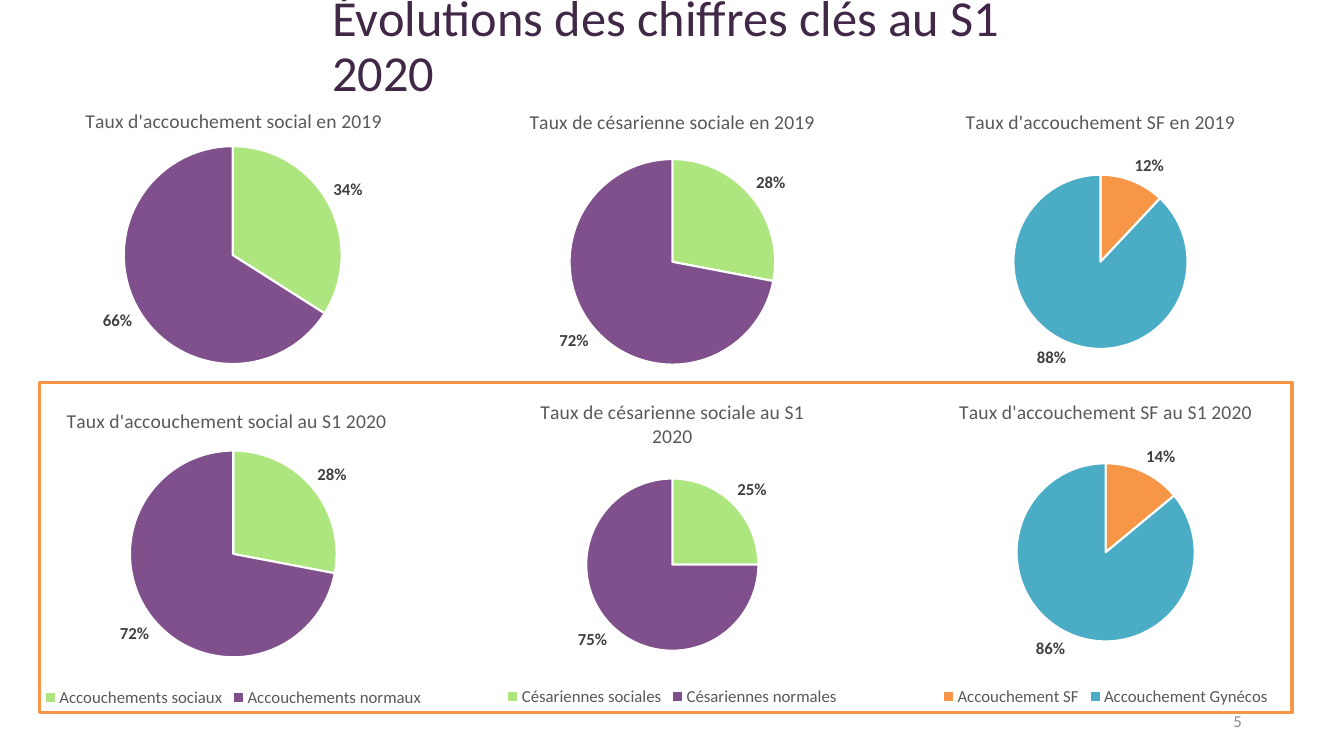
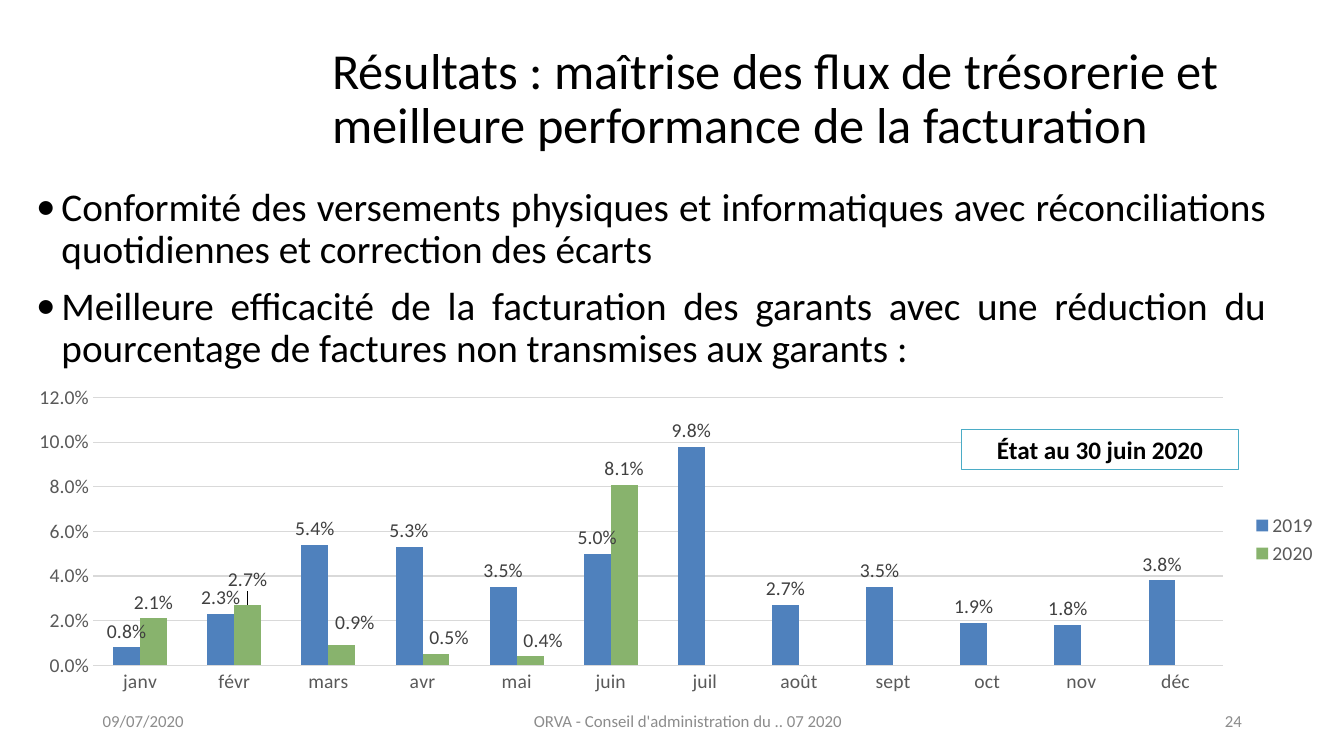
"""Build two slides of key figures and billing results."""
from dataclasses import dataclass
from typing import Any, Optional

import lxml.etree
import pptx
import pptx.chart.data
import pptx.dml.color
import pptx.enum.chart
import pptx.enum.shapes
import pptx.enum.text
import pptx.oxml
import pptx.oxml.ns
import pptx.util

Cm = pptx.util.Cm
Pt = pptx.util.Pt
Align = pptx.enum.text.PP_ALIGN
Spot = pptx.enum.chart.XL_LABEL_POSITION
Kind = pptx.enum.chart.XL_CHART_TYPE
Side = pptx.enum.chart.XL_LEGEND_POSITION
Box = tuple[float, float, float, float]

FACE = "Calibri"
BLACK, WHITE = "000000", "FFFFFF"
GREY, DARK, PALE, FOOT = "595959", "404040", "D9D9D9", "8C8C8C"
PLUM, ORANGE, TEAL = "402846", "F79646", "4BACC6"
SOCIAL = ("ADE67F", "7F508B")
MIDWIFE = (ORANGE, TEAL)
BARS = ("4F81BD", "88B36D")
MONTHS = ("janv", "févr", "mars", "avr", "mai", "juin",
          "juil", "août", "sept", "oct", "nov", "déc")
RATES = {
    "2019": (0.008, 0.023, 0.054, 0.053, 0.035, 0.05,
             0.098, 0.027, 0.035, 0.019, 0.018, 0.038),
    "2020": (0.021, 0.027, 0.009, 0.005, 0.004, 0.081),
}
SHIFTS = {1: (0, -0.03), 2: (0.01, -0.02), 3: (0.01, 0), 4: (0.01, 0)}
POINTS = (
    "Conformité des versements physiques et informatiques avec "
    "réconciliations quotidiennes et correction des écarts",
    "Meilleure efficacité de la facturation des garants avec une réduction "
    "du pourcentage de factures non transmises aux garants :",
)


@dataclass
class Style:
    """Hold the look of a text block."""
    size: float
    tint: str
    align: Any = Align.LEFT
    lead: Optional[float] = None
    bold: bool = False
    middle: bool = True
    bullet: bool = False


@dataclass
class Pie:
    """Hold one pie chart, with its plot width and centre height."""
    title: str
    box: Box
    share: int
    tints: tuple[str, str]
    width: float
    centre: float
    names: Optional[tuple[str, str]] = None
    head: Optional[tuple[float, float]] = None


PIES = (
    Pie("Taux d'accouchement social en 2019", (0.99, 2.18, 9.75, 7.34),
        34, SOCIAL, 5.49, 6.43, head=(0.11, 0.06)),
    Pie("Taux de césarienne sociale en 2019", (12.12, 2.36, 9.65, 7.34),
        28, SOCIAL, 5.18, 6.6),
    Pie("Taux d'accouchement SF en 2019", (22.02, 2.36, 11.43, 7.34),
        12, MIDWIFE, 4.39, 6.6),
    Pie("Taux d'accouchement social au S1 2020", (0.38, 9.68, 11, 8.26),
        28, SOCIAL, 5.21, 13.96,
        ("Accouchements sociaux", "Accouchements normaux"), (0.11, 0.06)),
    Pie("Taux de césarienne sociale au S1 2020", (11.99, 9.65, 9.91, 8.26),
        25, SOCIAL, 4.34, 14.23,
        ("Césariennes sociales", "Césariennes normales")),
    Pie("Taux d'accouchement SF au S1 2020", (22.15, 9.65, 11.43, 8.26),
        14, MIDWIFE, 4.49, 13.92,
        ("Accouchement SF", "Accouchement Gynécos")),
)


def tint(code: str) -> pptx.dml.color.RGBColor:
    """Turn a hex string into a colour."""
    return pptx.dml.color.RGBColor.from_string(code)


def paint(part: Any, code: str) -> None:
    """Fill a shape or chart format with a solid colour."""
    part.fill.solid()
    part.fill.fore_color.rgb = tint(code)


def edge(line: Any, code: str, width: float) -> None:
    """Set the colour and width of a line."""
    line.color.rgb = tint(code)
    line.width = Pt(width)


def set_font(font: Any, size: float, code: str, bold: bool = False) -> None:
    """Set face, size, colour and weight of a font."""
    font.name, font.size, font.bold = FACE, Pt(size), bold
    font.color.rgb = tint(code)


def add_mark(para: Any) -> None:
    """Give a paragraph a hanging bullet."""
    props = para._p.get_or_add_pPr()
    props.set("marL", str(Cm(0.64)))
    props.set("indent", str(-Cm(0.64)))
    for tag, key, value in (("a:buFont", "typeface", FACE),
                            ("a:buChar", "char", "•")):
        mark = lxml.etree.SubElement(props, pptx.oxml.ns.qn(tag))
        mark.set(key, value)


def write(slide: Any, box: Box, lines: tuple[str, ...], style: Style) -> Any:
    """Add a wrapped text box with one paragraph per line."""
    shape = slide.shapes.add_textbox(*map(Cm, box))
    frame = shape.text_frame
    frame.word_wrap = True
    anchor = pptx.enum.text.MSO_ANCHOR
    frame.vertical_anchor = anchor.MIDDLE if style.middle else anchor.TOP
    for rank, line in enumerate(lines):
        para = frame.add_paragraph() if rank else frame.paragraphs[0]
        para.text = line
        para.alignment = style.align
        if style.lead:
            para.line_spacing = style.lead
        if rank:
            para.space_before = Pt(10)
        if style.bullet:
            add_mark(para)
        set_font(para.font, style.size, style.tint, style.bold)
    return shape


def add_title(slide: Any, box: Box, text: str, code: str) -> None:
    """Add the slide title."""
    write(slide, box, (text,), Style(36, code, lead=0.9))


def add_foot(slide: Any, left: float, width: float, text: str,
             align: Any) -> None:
    """Add one footer item."""
    write(slide, (left, 17.65, width, 1.02), (text,), Style(12, FOOT, align))


def add_page(slide: Any, number: int) -> None:
    """Add the page number."""
    add_foot(slide, 23.93, 7.62, str(number), Align.RIGHT)


def xml(body: str) -> Any:
    """Parse a chart fragment."""
    first, rest = body.split(">", 1)
    spaces = pptx.oxml.ns.nsdecls("c", "a")
    return pptx.oxml.parse_xml(f"{first} {spaces}>{rest}")


def layout(inner: str) -> str:
    """Wrap manual layout settings."""
    return f"<c:layout><c:manualLayout>{inner}</c:manualLayout></c:layout>"


def place(part: Any, rank: int, inner: str) -> None:
    """Give a chart part a manual layout."""
    for old in part.findall(pptx.oxml.ns.qn("c:layout")):
        part.remove(old)
    part.insert(rank, xml(layout(inner)))


def place_plot(chart: Any, box: Box) -> None:
    """Place the inner plot by fractions of the chart."""
    inner = '<c:layoutTarget val="inner"/>'
    inner += "".join(f'<c:{key}Mode val="edge"/>' for key in "xy")
    inner += "".join(f'<c:{key} val="{size:.4f}"/>'
                     for key, size in zip("xywh", box))
    place(chart.element.find(".//" + pptx.oxml.ns.qn("c:plotArea")), 0, inner)


def add_chart(slide: Any, kind: Any, box: Box, data: Any, size: float) -> Any:
    """Add a chart with a clear ground."""
    chart = slide.shapes.add_chart(kind, *map(Cm, box), data).chart
    set_font(chart.font, size, BLACK)
    ground = xml("<c:spPr><a:noFill/><a:ln><a:noFill/></a:ln></c:spPr>")
    chart.element.find(pptx.oxml.ns.qn("c:chart")).addnext(ground)
    return chart


def add_legend(chart: Any, side: Any, size: float) -> None:
    """Show the legend on one side."""
    chart.has_legend = True
    chart.legend.position = side
    chart.legend.include_in_layout = False
    set_font(chart.legend.font, size, GREY)


def add_pie(slide: Any, pie: Pie) -> None:
    """Draw one pie chart."""
    data = pptx.chart.data.CategoryChartData()
    data.categories = pie.names or ("1", "2")
    data.add_series("Series 1", (pie.share, 100 - pie.share))
    chart = add_chart(slide, Kind.PIE, pie.box, data, 10)
    chart.has_title = True
    para = chart.chart_title.text_frame.paragraphs[0]
    para.text = pie.title
    set_font(para.font, 14, GREY)
    if pie.head:
        left, top = pie.head
        place(chart.element.find(".//" + pptx.oxml.ns.qn("c:title")), 1,
              '<c:xMode val="edge"/><c:yMode val="edge"/>'
              f'<c:x val="{left}"/><c:y val="{top}"/>')
    chart.has_legend = False
    if pie.names:
        add_legend(chart, Side.BOTTOM, 12)
    plot = chart.plots[0]
    plot.vary_by_categories = True
    for rank, code in enumerate(pie.tints):
        look = plot.series[0].points[rank].format
        paint(look, code)
        edge(look.line, WHITE, 1.5)
    labels = plot.series[0].data_labels
    labels.show_percentage, labels.show_value = True, False
    labels.number_format, labels.number_format_is_linked = "0%", False
    labels.position = Spot.OUTSIDE_END
    set_font(labels.font, 12, DARK, True)
    _, top, wide, high = pie.box
    across, down = pie.width / wide, pie.width / high
    place_plot(chart, ((1 - across) / 2,
                       (pie.centre - top) / high - down / 2, across, down))


def shift_label(labels: Any, rank: int, right: float, down: float) -> None:
    """Move one value label off its usual place."""
    shows = "".join(
        f'<c:show{name} val="{int(name == "Val")}"/>'
        for name in ("LegendKey", "Val", "CatName", "SerName",
                     "Percent", "BubbleSize"))
    inner = layout(f'<c:x val="{right}"/><c:y val="{down}"/>')
    labels.insert(rank, xml(f'<c:dLbl><c:idx val="{rank + 1}"/>{inner}'
                            f'<c:dLblPos val="outEnd"/>{shows}</c:dLbl>'))


def hide_leads(labels: Any) -> None:
    """Hide the lines from moved labels to their bars."""
    labels.append(xml(
        '<c:extLst><c:ext uri="{CE6537A1-D6FC-4f65-9D91-7224C49458BB}" '
        'xmlns:c15="http://schemas.microsoft.com/office/drawing/2012/chart">'
        '<c15:showLeaderLines val="0"/></c:ext></c:extLst>'))


def add_bars(slide: Any) -> None:
    """Draw the monthly rates."""
    data = pptx.chart.data.CategoryChartData(number_format="0.0%")
    data.categories = MONTHS
    for name, rates in RATES.items():
        data.add_series(name, rates)
    chart = add_chart(slide, Kind.COLUMN_CLUSTERED,
                      (0.36, 9.53, 33.1, 8.13), data, 14)
    chart.has_title = False
    add_legend(chart, Side.RIGHT, 14)
    plot = chart.plots[0]
    plot.gap_width, plot.overlap = 150, 0
    plot.vary_by_categories = False
    for series, code in zip(plot.series, BARS):
        paint(series.format, code)
        labels = series.data_labels
        labels.show_value = True
        labels.number_format, labels.number_format_is_linked = "0.0%", False
        labels.position = Spot.OUTSIDE_END
        set_font(labels.font, 14, DARK)
    holder = plot.series[1].data_labels._element
    for rank, move in SHIFTS.items():
        shift_label(holder, rank - 1, *move)
    hide_leads(holder)
    for axis in (chart.category_axis, chart.value_axis):
        axis.major_tick_mark = pptx.enum.chart.XL_TICK_MARK.NONE
        set_font(axis.tick_labels.font, 14, GREY)
    edge(chart.category_axis.format.line, PALE, 0.75)
    scale = chart.value_axis
    scale.minimum_scale, scale.maximum_scale = 0, 0.12
    scale.major_unit = 0.02
    scale.tick_labels.number_format = "0.0%"
    scale.tick_labels.number_format_is_linked = False
    scale.format.line.fill.background()
    edge(scale.major_gridlines.format.line, PALE, 0.75)
    place_plot(chart, (0.06, 0.06, 0.86, 0.83))


def draw_rates(slide: Any) -> None:
    """Draw the slide of six pies."""
    kind = pptx.enum.shapes.MSO_SHAPE.RECTANGLE
    frame = slide.shapes.add_shape(kind, *map(Cm, (0.99, 9.65, 31.57, 8.31)))
    frame.shadow.inherit = False
    paint(frame, WHITE)
    edge(frame.line, ORANGE, 2.25)
    add_page(slide, 5)
    add_title(slide, (8.13, 0.33, 19.8, 1.75),
              "Évolutions des chiffres clés au S1 2020", PLUM)
    for pie in PIES:
        add_pie(slide, pie)


def draw_bills(slide: Any) -> None:
    """Draw the slide of billing results."""
    add_foot(slide, 2.34, 7.62, "09/07/2020", Align.LEFT)
    add_foot(slide, 11.94, 10.8,
             "ORVA - Conseil d'administration du .. 07 2020", Align.CENTER)
    add_page(slide, 24)
    write(slide, (0.66, 4.6, 31.5, 4.9), POINTS,
          Style(28, BLACK, Align.JUSTIFY, 0.9, middle=False, bullet=True))
    add_bars(slide)
    add_title(slide, (8.13, 0.53, 24.03, 3.99),
              "Résultats : maîtrise des flux de trésorerie et meilleure "
              "performance de la facturation", BLACK)
    note = write(slide, (24.23, 10.82, 6.99, 1.02), ("État au 30 juin 2020",),
                 Style(18, BLACK, Align.CENTER, bold=True))
    paint(note, WHITE)
    edge(note.line, TEAL, 1)


def main() -> None:
    """Build and save the deck."""
    deck = pptx.Presentation()
    deck.slide_width, deck.slide_height = Cm(33.87), Cm(19.05)
    for draw in (draw_rates, draw_bills):
        draw(deck.slides.add_slide(deck.slide_layouts[6]))
    deck.save("out.pptx")


if __name__ == "__main__":
    main()
